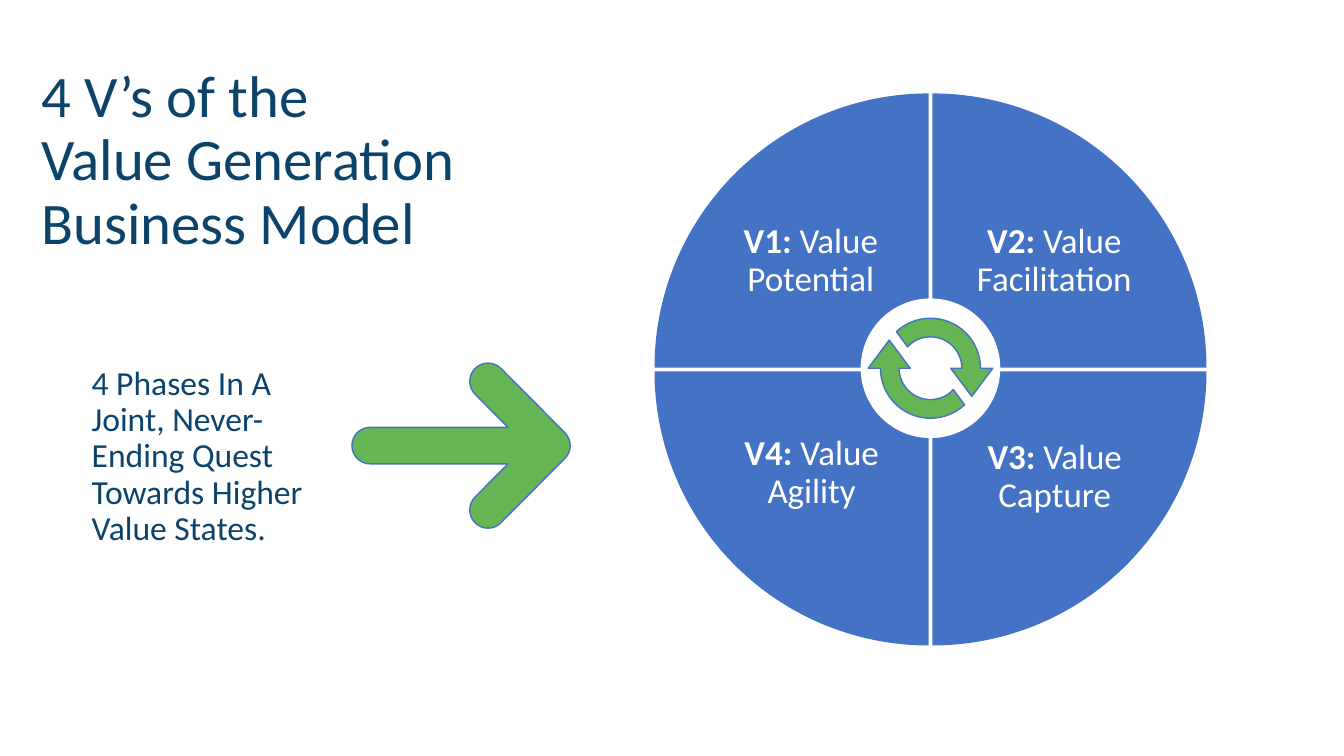
from dataclasses import dataclass
from math import cos, radians, sin, tan

from lxml.etree import Element
from pptx import Presentation
from pptx.dml.color import RGBColor
from pptx.enum.shapes import MSO_SHAPE
from pptx.enum.text import MSO_ANCHOR, MSO_AUTO_SIZE, PP_ALIGN
from pptx.oxml.ns import qn
from pptx.util import Cm, Pt

NAVY = RGBColor(0x0C, 0x43, 0x6B)
BLUE = RGBColor(0x44, 0x72, 0xC4)
GREEN = RGBColor(0x65, 0xB5, 0x54)
WHITE = RGBColor(0xFF, 0xFF, 0xFF)
FONT = "Calibri"

# Wheel geometry in centimetres
WHEEL_X, WHEEL_Y = 23.45, 9.31
WEDGE, GAP = 6.91, 0.09
HUB_X, HUB_Y, HUB_R = 23.45, 9.28, 1.76

Point = tuple[float, float]
Segment = list[Point]  # one point for a line, three for a curve


@dataclass
class Phase:
    code: str
    name: str
    column: int
    row: int
    rotation: int
    label_box: tuple[float, float, float, float]


PHASES = [
    Phase("V1:", " Value Potential", 0, 0, 0, (17.69, 5.13, 5.49, 2.92)),
    Phase("V2:", " Value Facilitation", 1, 0, 90, (23.37, 5.17, 6.4, 2.82)),
    Phase("V3:", " Value Capture", 1, 1, 180, (23.14, 10.52, 6.88, 3.02)),
    Phase("V4:", " Value Agility", 0, 1, 270, (17.71, 10.46, 5.49, 2.92)),
]


def set_text(sp, paragraphs: list[list[tuple[str, bool]]], size: int, color: RGBColor,
             align=PP_ALIGN.LEFT, anchor=MSO_ANCHOR.TOP, inset: float = 0.13) -> None:
    """Fill a shape with paragraphs of (text, bold) runs."""
    tf = sp.text_frame
    frame_format = {"word_wrap": True, "auto_size": MSO_AUTO_SIZE.NONE,
                    "vertical_anchor": anchor}
    frame_format.update({f"margin_{side}": Cm(inset)
                         for side in ("left", "top", "right", "bottom")})
    for name, value in frame_format.items():
        setattr(tf, name, value)
    for i, runs in enumerate(paragraphs):
        p = tf.paragraphs[0] if i == 0 else tf.add_paragraph()
        for name, value in {"alignment": align, "line_spacing": 0.9,
                            "space_before": Pt(0)}.items():
            setattr(p, name, value)
        for text, bold in runs:
            r = p.add_run()
            r.text = text
            for name, value in {"name": FONT, "size": Pt(size), "bold": bold}.items():
                setattr(r.font, name, value)
            r.font.color.rgb = color


def paint(sp, fill: RGBColor, line: RGBColor | None = None) -> None:
    sp.shadow.inherit = False
    sp.fill.solid()
    sp.fill.fore_color.rgb = fill
    if line is None:
        sp.line.fill.background()
    else:
        sp.line.color.rgb = line
        sp.line.width = Pt(1)


def arc(x: float, y: float, radius: float, start: int, end: int) -> list[Segment]:
    """A line to the arc's start, then one curve per quadrant, angles anticlockwise."""
    low, high = sorted((start, end))
    stops = [low, *(a for a in range(-360, 361, 90) if low < a < high), high]
    if start > end:
        stops.reverse()

    def at(angle: int, pull: float = 0) -> Point:
        a = radians(angle)
        return (x + radius * (cos(a) - pull * sin(a)),
                y - radius * (sin(a) + pull * cos(a)))

    segments = [[at(start)]]
    for a, b in zip(stops, stops[1:]):
        pull = 4 / 3 * tan(radians(b - a) / 4)
        segments.append([at(a, pull), at(b, -pull), at(b)])
    return segments


def add_outline(shapes, contours: list[list[Segment]]) -> None:
    """Draw closed contours, each starting with a point, as one green shape."""
    builder = None
    for contour in contours:
        points = [(Cm(x), Cm(y)) for segment in contour for x, y in segment]
        if builder is None:
            builder = shapes.build_freeform(*points[0])
        else:
            builder.move_to(*points[0])
        builder.add_line_segments(points[1:], close=True)
    sp = builder.convert_to_shape()
    paint(sp, GREEN, BLUE)

    # Join each run of three curve points into a Bézier command
    lines = iter(list(sp.element.iter(qn("a:lnTo"))))
    for contour in contours:
        for segment in contour[1:]:
            group = [next(lines) for _ in segment]
            if len(group) == 3:
                curve = Element(qn("a:cubicBezTo"))
                group[0].addprevious(curve)
                for line in group:
                    curve.append(line[0])
                    line.getparent().remove(line)


def add_phase(shapes, phase: Phase) -> None:
    left = WHEEL_X + (GAP / 2 if phase.column else -GAP / 2 - WEDGE)
    top = WHEEL_Y + (GAP / 2 if phase.row else -GAP / 2 - WEDGE)
    sp = shapes.add_shape(MSO_SHAPE.PIE_WEDGE, Cm(left), Cm(top), Cm(WEDGE), Cm(WEDGE))
    sp.rotation = phase.rotation
    paint(sp, BLUE)
    label = shapes.add_textbox(*map(Cm, phase.label_box))
    set_text(label, [[(phase.code, True), (phase.name, False)]], 25, WHITE,
             PP_ALIGN.CENTER, MSO_ANCHOR.MIDDLE, 0.56)


def add_cycle_arrows(shapes) -> None:
    head = [[(HUB_X + dx, HUB_Y + dy)] for dx, dy in ((1.57, 0), (1.04, 0.71), (0.51, 0))]
    upper = arc(HUB_X, HUB_Y, 1.26, 133, 0) + head + arc(HUB_X, HUB_Y, 0.79, 0, 137)
    lower = [[(2 * HUB_X - x, 2 * HUB_Y - y) for x, y in segment] for segment in upper]
    add_outline(shapes, [upper, lower])


def add_pointer(shapes) -> None:
    axis, barb, r = 11.23, 1.62, 0.46
    add_outline(shapes, [
        arc(9.33, axis, r, 270, 90) + [[(12.8, axis - r)]]
        + arc(12.3, axis - barb, r, 225, 45)
        + arc(13.91, axis, r, 45, -45)
        + arc(12.3, axis + barb, r, -45, -225) + [[(12.8, axis + r)]]
    ])


def main() -> None:
    prs = Presentation()
    prs.slide_width, prs.slide_height = Cm(33.87), Cm(19.05)
    s = prs.slides.add_slide(prs.slide_layouts[5])
    shapes = s.shapes

    # Title and side note
    title = shapes.title
    for name, value in {"left": 0.91, "top": 1.54, "width": 10.9, "height": 5.1}.items():
        setattr(title, name, Cm(value))
    set_text(title, [[("4 V’s of the", False)],
                     [("Value Generation Business Model", False)]], 42, NAVY)
    note = shapes.add_textbox(Cm(2.18), Cm(9.1), Cm(6.63), Cm(4.85))
    set_text(note, [[("4 Phases In A Joint, Never-Ending Quest Towards Higher "
                      "Value States.", False)]], 24, NAVY)

    # Wheel of phases
    for phase in PHASES:
        add_phase(shapes, phase)
    hub = shapes.add_shape(MSO_SHAPE.OVAL, Cm(HUB_X - HUB_R), Cm(HUB_Y - HUB_R),
                           Cm(2 * HUB_R), Cm(2 * HUB_R))
    paint(hub, WHITE)
    add_cycle_arrows(shapes)

    # Arrow from the note to the wheel
    add_pointer(shapes)
    prs.save("out.pptx")


if __name__ == "__main__":
    main()
